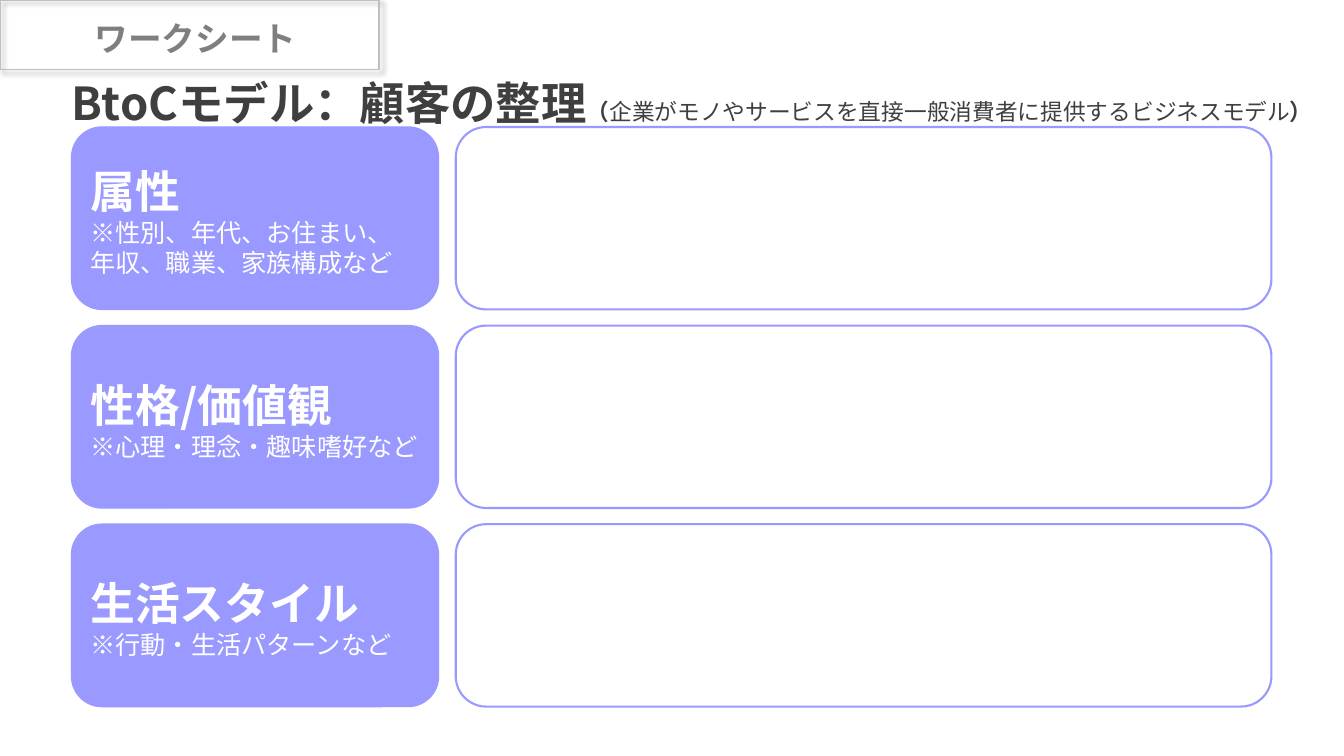
from lxml.etree import SubElement
from pptx import Presentation
from pptx.dml.color import RGBColor
from pptx.enum.shapes import MSO_SHAPE
from pptx.enum.text import MSO_ANCHOR, MSO_AUTO_SIZE, PP_ALIGN
from pptx.oxml.ns import qn
from pptx.util import Inches, Pt

FONT = "Noto Sans CJK JP"
LAVENDER = "9999FF"
LEFT, TOP = 0.71, 1.26
ROW_HEIGHT, ROW_PITCH = 1.81, 1.97
LABEL_WIDTH, ANSWER_WIDTH, GUTTER = 3.64, 8.09, 0.17

# Each topic: heading, then lines of (text, bold) runs
TOPICS = [
    ("属性", [[("※", True), ("性別、年代、お住まい、", False)],
            [("年収、職業、家族構成など", False)]]),
    ("性格/価値観", [[("※心理・理念・趣味嗜好など", False)]]),
    ("生活スタイル", [[("※行動・生活パターンなど", False)]]),
]


def rgb(value):
    return RGBColor.from_string(value)


def add_run(paragraph, text, size, color, bold):
    run = paragraph.add_run()
    run.text = text
    font = run.font
    font.size, font.bold, font.name = Pt(size), bold, FONT
    font.color.rgb = rgb(color)
    SubElement(font._element, qn("a:ea")).set("typeface", FONT)


def set_insets(frame, left, top, right, bottom):
    frame.margin_left, frame.margin_top = Inches(left), Inches(top)
    frame.margin_right, frame.margin_bottom = Inches(right), Inches(bottom)


def add_panel(shapes, kind, box, line, weight, fill=None):
    panel = shapes.add_shape(kind, *map(Inches, box))
    panel.shadow.inherit = False
    if fill:
        panel.fill.solid()
        panel.fill.fore_color.rgb = rgb(fill)
    else:
        panel.fill.background()
    panel.line.color.rgb = rgb(line)
    panel.line.width = Pt(weight)
    return panel


def add_drop_shadow(panel):
    effects = panel._element.spPr.find(qn("a:effectLst"))
    shadow = SubElement(effects, qn("a:outerShdw"), blurRad=str(Pt(4)),
                        dist=str(Pt(3)), dir=str(45 * 60000), algn="tl", rotWithShape="0")
    black = SubElement(shadow, qn("a:srgbClr"), val="000000")
    SubElement(black, qn("a:alpha"), val="40000")


def fill_title(title, box):
    title.left, title.top, title.width, title.height = map(Inches, box)
    frame = title.text_frame
    frame.word_wrap = True
    frame.auto_size = MSO_AUTO_SIZE.NONE
    frame.vertical_anchor = MSO_ANCHOR.BOTTOM
    set_insets(frame, 0, 0, 0, 0)
    heading = frame.paragraphs[0]
    heading.alignment = PP_ALIGN.LEFT
    heading.line_spacing = 0.9
    for text, size, bold in [
        ("BtoCモデル：顧客の整理", 32.4, True),
        ("（", 16.2, True),
        ("企業がモノやサービスを直接一般消費者に提供するビジネスモデル", 16.2, False),
        ("）", 16.2, True),
    ]:
        add_run(heading, text, size, "3F3F3F", bold)


def add_topic_row(shapes, left, top, heading, hint_lines):
    """Place a topic label with an empty answer field to its right."""
    label = add_panel(shapes, MSO_SHAPE.ROUNDED_RECTANGLE,
                      (left, top, LABEL_WIDTH, ROW_HEIGHT), LAVENDER, 1, LAVENDER)
    frame = label.text_frame
    frame.word_wrap = True
    frame.vertical_anchor = MSO_ANCHOR.MIDDLE
    set_insets(frame, 0.1, 0.05, 0.1, 0)
    frame.paragraphs[0].alignment = PP_ALIGN.LEFT
    add_run(frame.paragraphs[0], heading, 32, "FFFFFF", True)
    for hint_runs in hint_lines:
        hint = frame.add_paragraph()
        hint.alignment = PP_ALIGN.LEFT
        for text, bold in hint_runs:
            add_run(hint, text, 18, "FFFFFF", bold)
    add_panel(shapes, MSO_SHAPE.ROUNDED_RECTANGLE,
              (left + LABEL_WIDTH + GUTTER, top, ANSWER_WIDTH, ROW_HEIGHT), LAVENDER, 1.5)


def add_worksheet_tag(shapes, left, top, width, height):
    tag = shapes.add_group_shape().shapes
    add_drop_shadow(add_panel(tag, MSO_SHAPE.RECTANGLE, (left, top, width, height), "BFBFBF", 1))
    caption = tag.add_textbox(*map(Inches, (left + 0.12, top + 0.13, width - 0.12, 0.5)))
    frame = caption.text_frame
    frame.word_wrap = True
    frame.auto_size = MSO_AUTO_SIZE.SHAPE_TO_FIT_TEXT
    set_insets(frame, 0.1, 0.05, 0.1, 0.05)
    frame.paragraphs[0].alignment = PP_ALIGN.CENTER
    add_run(frame.paragraphs[0], "ワークシート", 24, "7F7F7F", True)


def main():
    deck = Presentation()
    deck.slide_width, deck.slide_height = Inches(13.33), Inches(7.5)
    slide = deck.slides.add_slide(deck.slide_layouts[5])
    fill_title(slide.shapes.title, (LEFT, 0.6, 12.51, 0.69))
    for row, (heading, hint_lines) in enumerate(TOPICS):
        add_topic_row(slide.shapes, LEFT, TOP + row * ROW_PITCH, heading, hint_lines)
    add_worksheet_tag(slide.shapes, 0, 0, 3.76, 0.69)
    deck.save("out.pptx")


if __name__ == "__main__":
    main()
